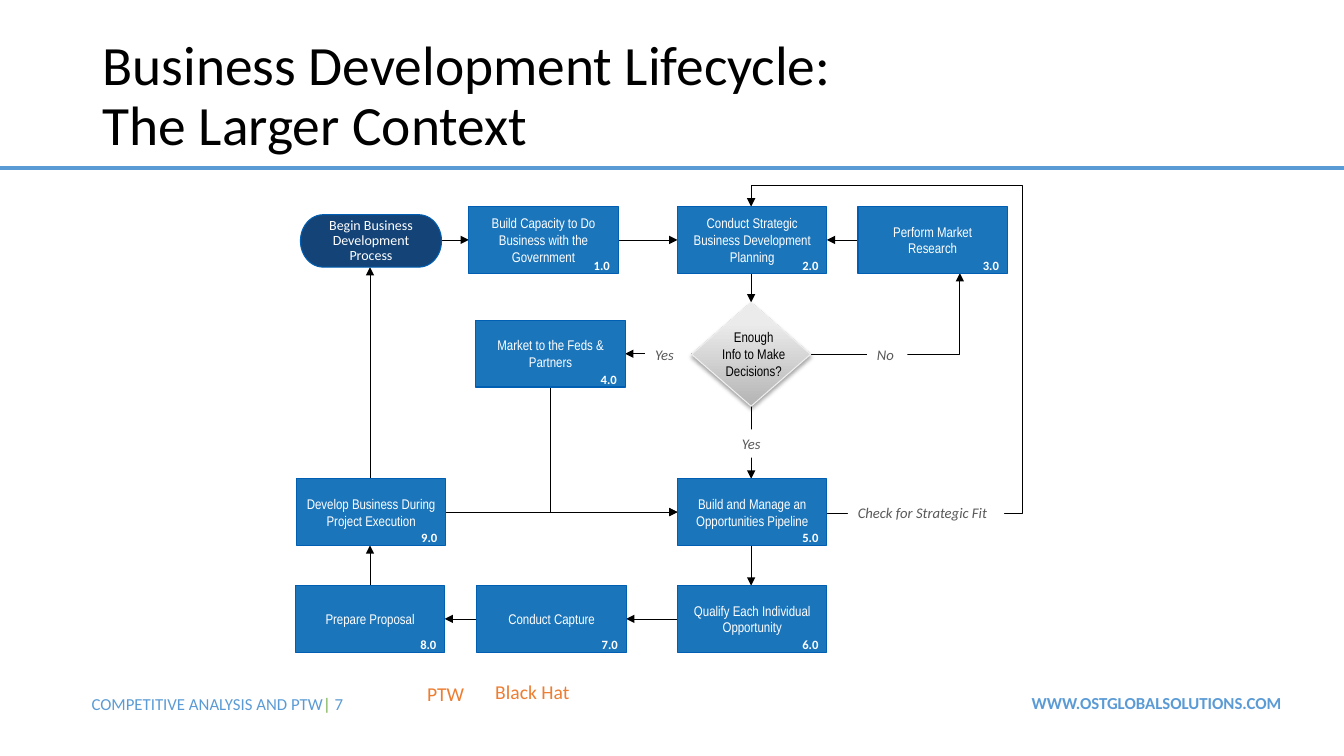
from dataclasses import dataclass

from lxml import etree
from pptx import Presentation
from pptx.dml.color import RGBColor
from pptx.enum import shapes, text
from pptx.oxml import ns
from pptx.util import Inches, Pt

KIND = shapes.MSO_SHAPE
LINK = shapes.MSO_CONNECTOR
ALIGN = text.PP_ALIGN
MID = text.MSO_ANCHOR.MIDDLE


@dataclass(frozen=True)
class Theme:
    body: str = "Calibri"
    slim: str = "Arial Narrow"
    black: str = "000000"
    white: str = "FFFFFF"
    blue: str = "5B9BD5"
    green: str = "70AD47"
    orange: str = "ED7D31"
    gray: str = "595959"
    box: str = "1B75BB"
    start: str = "144377"
    edge: str = "005FB2"
    pale: str = "EEEEEE"
    dark: str = "B4B4B4"
    light: str = "EBEBEB"
    title: float = 39.6
    note: float = 14
    foot: float = 12
    label: float = 10.5
    step: float = 10
    num: float = 9


T = Theme()
WIDE, HIGH = 1.48, 0.66  # size of a step box

# Step: left, top, wording; numbered in order
STEPS = [
    (4.65, 2.05, "Build Capacity to Do Business with the Government"),
    (6.72, 2.05, "Conduct Strategic Business Development Planning"),
    (8.51, 2.05, "Perform Market Research"),
    (4.72, 3.18, "Market to the Feds & Partners"),
    (6.72, 4.75, "Build and Manage an Opportunities Pipeline"),
    (6.72, 5.81, "Qualify Each Individual Opportunity"),
    (4.73, 5.81, "Conduct Capture"),
    (2.93, 5.81, "Prepare Proposal"),
    (2.94, 4.75, "Develop Business During Project Execution"),
]

# Straight arrows: x and y of start, x and y of end
ARROWS = [
    (4.38, 2.38, 4.65, 2.38),
    (6.13, 2.38, 6.72, 2.38),
    (8.51, 2.38, 8.2, 2.38),
    (7.45, 2.71, 7.45, 3),
    (6.86, 3.51, 6.2, 3.51),
    (7.45, 4.03, 7.45, 4.75),
    (4.42, 5.08, 6.72, 5.08),
    (7.45, 5.41, 7.45, 5.81),
    (6.72, 6.14, 6.21, 6.14),
    (4.73, 6.14, 4.41, 6.14),
    (3.67, 5.81, 3.67, 5.41),
    (3.67, 4.75, 3.67, 2.65),
]

# Bent arrows: ends, preset, bends as shares of width and height
BENDS = [
    ((8.04, 3.52, 9.52, 2.71), "bentConnector3", [1]),
    ((5.46, 3.84, 6.72, 5.08), "bentConnector3", [0]),
    ((8.19, 5.09, 7.45, 2.05), "bentConnector4", [-2.64, 1.07]),
]

# Labels on arrows: left, top, width, wording
LABELS = [
    (8.6, 3.38, 0.4, "No"),
    (7.26, 4.26, 0.52, "Yes"),
    (6.4, 3.38, 0.46, "Yes"),
    (8.41, 4.95, 1.55, "Check for Strategic Fit"),
]


def rgb(code):
    return RGBColor.from_string(code)


def add(parent, tag, **attrs):
    return etree.SubElement(parent, ns.qn(tag), attrs)


def write(shape, words, size, color, face=T.body, align=ALIGN.LEFT,
          bold=False, italic=False):
    frame = shape.text_frame
    frame.word_wrap = True
    frame.text = words
    para = frame.paragraphs[0]
    para.alignment = align
    font = para.font
    font.name, font.size, font.color.rgb = face, Pt(size), rgb(color)
    font.bold, font.italic = bold, italic
    return para


def label(slide, place, words, size, color, **style):
    box = slide.shapes.add_textbox(*map(Inches, place))
    return write(box, words, size, color, **style)


def block(slide, kind, place, fill=None, edge=None):
    shape = slide.shapes.add_shape(kind, *map(Inches, place))
    shape.shadow.inherit = False
    if fill:
        shape.fill.solid()
        shape.fill.fore_color.rgb = rgb(fill)
    if edge:
        shape.line.color.rgb = rgb(edge)
        shape.line.width = Pt(0.75)
    else:
        shape.line.fill.background()
    return shape


def line(slide, ends, color=T.black, width=0.5, head=True, kind=LINK.STRAIGHT):
    link = slide.shapes.add_connector(kind, *map(Inches, ends))
    link.line.color.rgb = rgb(color)
    link.line.width = Pt(width)
    if head:
        add(link.line._get_or_add_ln(), "a:tailEnd", type="triangle")
    add(link._element.spPr, "a:effectLst")
    return link


def bend(slide, ends, preset, shares):
    link = line(slide, ends, kind=LINK.ELBOW)
    geom = link._element.spPr.find(ns.qn("a:prstGeom"))
    geom.set("prst", preset)
    guides = geom.find(ns.qn("a:avLst"))
    if guides is None:
        guides = add(geom, "a:avLst")
    for i, share in enumerate(shares, 1):
        add(guides, "a:gd", name=f"adj{i}", fmla=f"val {round(share * 100000)}")


def step(slide, num, left, top, words):
    box = block(slide, KIND.FLOWCHART_PROCESS, (left, top, WIDE, HIGH),
                T.box, T.edge)
    box.text_frame.vertical_anchor = MID
    write(box, words, T.step, T.white, T.slim, ALIGN.CENTER)
    label(slide, (left + 1.14, top + 0.46, 0.44, 0.25), f"{num}.0",
          T.num, T.white, bold=True)


def choice(slide):
    gem = block(slide, KIND.FLOWCHART_DECISION, (6.86, 3, 1.18, 1.03),
                edge=T.pale)
    gem.fill.gradient()
    gem.fill.gradient_angle = 90
    for stop, color, pos in zip(gem.fill.gradient_stops,
                                (T.dark, T.light), (0, 0.8)):
        stop.color.rgb, stop.position = rgb(color), pos
    glow = gem._element.spPr.find(ns.qn("a:effectLst"))
    shade = add(glow, "a:outerShdw", blurRad=str(Pt(3.1)), dist=str(Pt(1.8)),
                dir="5400000", rotWithShape="0")
    add(add(shade, "a:srgbClr", val=T.black), "a:alpha", val="35000")
    label(slide, (7.02, 3.21, 0.91, 0.61), "Enough\vInfo to Make Decisions?",
          T.step, T.black, face=T.slim, align=ALIGN.CENTER)


def frame(slide):
    # Rule, title and footer
    line(slide, (0, 1.67, 13.33, 1.67), T.blue, 3, head=False)
    box = slide.shapes.add_textbox(*map(Inches, (0.92, 0.4, 7.56, 1.14)))
    box.text_frame.vertical_anchor = MID
    head = write(box, "Business Development Lifecycle: The Larger Context",
                 T.title, T.black)
    head.line_spacing = 0.9
    label(slide, (9.39, 6.82, 3.42, 0.3), "WWW.OSTGLOBALSOLUTIONS.COM",
          T.foot, T.blue, align=ALIGN.RIGHT, bold=True)
    foot = label(slide, (0.81, 6.83, 4.82, 0.3),
                 "COMPETITIVE ANALYSIS AND PTW", T.foot, T.blue)
    for words, color in (("| ", T.green), ("7", T.blue)):
        run = foot.add_run()
        run.text = words
        run.font.color.rgb = rgb(color)


def main():
    deck = Presentation()
    deck.slide_width, deck.slide_height = Inches(13.33), Inches(7.5)
    slide = deck.slides.add_slide(deck.slide_layouts[6])
    frame(slide)

    # Arrows lie under their labels and the boxes
    for ends in ARROWS:
        line(slide, ends)
    for item in BENDS:
        bend(slide, *item)
    for left, top, width, words in LABELS:
        tag = block(slide, KIND.RECTANGLE, (left, top, width, 0.28), T.white)
        tag.text_frame.vertical_anchor = text.MSO_ANCHOR.TOP
        write(tag, words, T.label, T.gray, italic=True)

    # Start, steps and decision
    start = block(slide, KIND.FLOWCHART_TERMINATOR, (2.98, 2.13, 1.4, 0.52),
                  T.start, T.edge)
    start.text_frame.vertical_anchor = MID
    write(start, "Begin Business Development Process", T.step, T.white,
          align=ALIGN.CENTER).line_spacing = 0.9
    for num, item in enumerate(STEPS, 1):
        step(slide, num, *item)
    choice(slide)

    # Notes under the flow
    for left, top, words in ((4.54, 6.7, "Black Hat"), (3.68, 6.72, "PTW")):
        label(slide, (left, top, WIDE, 0.34), words, T.note, T.orange,
              align=ALIGN.CENTER)
    deck.save("out.pptx")


if __name__ == "__main__":
    main()
